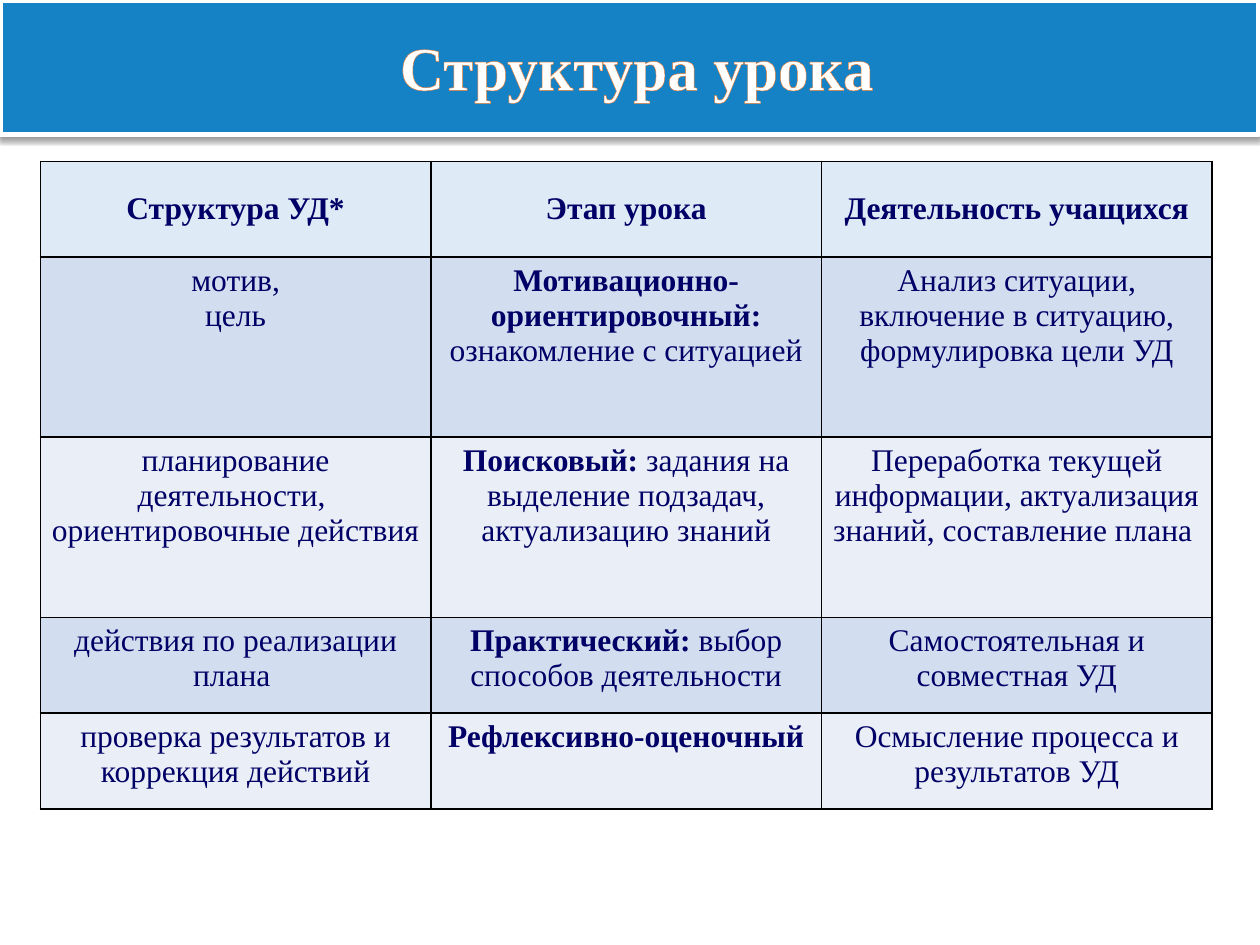
from lxml import etree
from pptx import Presentation, util as u
from pptx.dml.color import RGBColor
from pptx.enum import shapes, text
from pptx.oxml.ns import nsdecls, qn

TITLE = "Структура урока"
HEADER = ["Структура УД*", "Этап урока", "Деятельность учащихся"]
# A cell is a list of paragraphs, a paragraph a list of (text, bold) runs.
ROWS = [
    [[[("мотив,", False)], [("цель", False)]],
     [[("Мотивационно-ориентировочный:", True)], [("ознакомление с ситуацией", False)]],
     [[("Анализ ситуации, включение в ситуацию, формулировка цели УД", False)]]],
    [[[("планирование деятельности, ", False)], [("ориентировочные действия", False)]],
     [[("Поисковый: ", True), ("задания на выделение подзадач, актуализацию знаний", False)]],
     [[("Переработка текущей информации, актуализация знаний, составление плана ", False)]]],
    [[[("действия по реализации плана ", False)]],
     [[("Практический: ", True), ("выбор способов деятельности", False)]],
     [[("Самостоятельная и совместная УД", False)]]],
    [[[("проверка результатов и коррекция действий", False)]],
     [[("Рефлексивно-оценочный", True)]],
     [[("Осмысление процесса и результатов УД", False)]]],
]
ROW_HEIGHTS = [0.76, 1.43, 1.43, 0.76, 0.76]
COL_WIDTH = 3.1

THEME = dict(font="Times New Roman", title_size=35, cell_size=18,
             banner="1682C6", white="FFFFFF", outline="ED7D31", ink="000066",
             border="000000", header="DEEBF7", bands=["D2DEEF", "EAEFF7"])


def rgb(key):
    return RGBColor.from_string(THEME[key])


def line_xml(tag, color, points):
    return etree.fromstring(
        f'<a:{tag} {nsdecls("a")} w="{int(u.Pt(points))}"><a:solidFill>'
        f'<a:srgbClr val="{color}"/></a:solidFill></a:{tag}>')


def write(tf, paragraphs, size, color):
    for i, runs in enumerate(paragraphs):
        p = tf.paragraphs[0] if i == 0 else tf.add_paragraph()
        p.alignment = text.PP_ALIGN.CENTER
        for words, bold in runs:
            r = p.add_run()
            r.text = words
            fmt = dict(name=THEME["font"], size=u.Pt(THEME[size]), bold=bold)
            for name, value in fmt.items():
                setattr(r.font, name, value)
            r.font.color.rgb = rgb(color)


def add_banner(s):
    sp = s.shapes.add_shape(shapes.MSO_SHAPE.RECTANGLE, 0, 0,
                            u.Inches(9.99), u.Inches(1.07))
    sp.fill.solid()
    sp.fill.fore_color.rgb = rgb("banner")
    sp.line.color.rgb = rgb("white")
    sp.line.width = u.Pt(3)
    sp.shadow.inherit = False
    effects = sp._element.spPr.find(qn("a:effectLst"))
    effects.append(etree.fromstring(
        f'<a:outerShdw {nsdecls("a")} blurRad="{int(u.Pt(3))}" dist="{int(u.Pt(1.6))}" '
        'dir="5400000" rotWithShape="0"><a:srgbClr val="000000">'
        '<a:alpha val="38000"/></a:srgbClr></a:outerShdw>'))


def add_title(s):
    box = s.shapes.add_textbox(*map(u.Inches, (3.07, 0.19, 3.97, 0.68)))
    tf = box.text_frame
    fmt = dict(word_wrap=False, auto_size=text.MSO_AUTO_SIZE.SHAPE_TO_FIT_TEXT,
               margin_left=u.Inches(0.09), margin_right=u.Inches(0.09),
               margin_top=u.Inches(0.04), margin_bottom=u.Inches(0.04))
    for name, value in fmt.items():
        setattr(tf, name, value)
    write(tf, [[(TITLE, True)]], "title_size", "white")
    rpr = tf.paragraphs[0].runs[0]._r.get_or_add_rPr()
    rpr.insert(0, line_xml("ln", THEME["outline"], 0.52))


def add_lesson_table(s):
    rows = [[[[(name, True)]] for name in HEADER]] + ROWS
    size = (COL_WIDTH * len(HEADER), sum(ROW_HEIGHTS))
    table = s.shapes.add_table(len(rows), len(HEADER),
                               *map(u.Inches, (0.32, 1.28, *size))).table
    table.first_row = table.horz_banding = False
    for col in table.columns:
        col.width = u.Inches(COL_WIDTH)
    for i, (row, height) in enumerate(zip(rows, ROW_HEIGHTS)):
        table.rows[i].height = u.Inches(height)
        fill = THEME["bands"][(i - 1) % 2] if i else THEME["header"]
        anchor = text.MSO_ANCHOR.TOP if i else text.MSO_ANCHOR.MIDDLE
        for j, paragraphs in enumerate(row):
            cell = table.cell(i, j)
            fmt = dict(vertical_anchor=anchor,
                       margin_left=u.Inches(0.09), margin_right=u.Inches(0.09),
                       margin_top=u.Inches(0.05), margin_bottom=u.Inches(0.05))
            for name, value in fmt.items():
                setattr(cell, name, value)
            tcpr = cell._tc.get_or_add_tcPr()
            for side in ("lnL", "lnR", "lnT", "lnB"):
                tcpr.append(line_xml(side, THEME["border"], 1))
            cell.fill.solid()
            cell.fill.fore_color.rgb = RGBColor.from_string(fill)
            write(cell.text_frame, paragraphs, "cell_size", "ink")


def main():
    prs = Presentation()
    prs.slide_width, prs.slide_height = u.Inches(10), u.Inches(7.5)
    s = prs.slides.add_slide(prs.slide_layouts[6])
    add_banner(s)
    add_title(s)
    add_lesson_table(s)
    prs.save("out.pptx")


if __name__ == "__main__":
    main()
